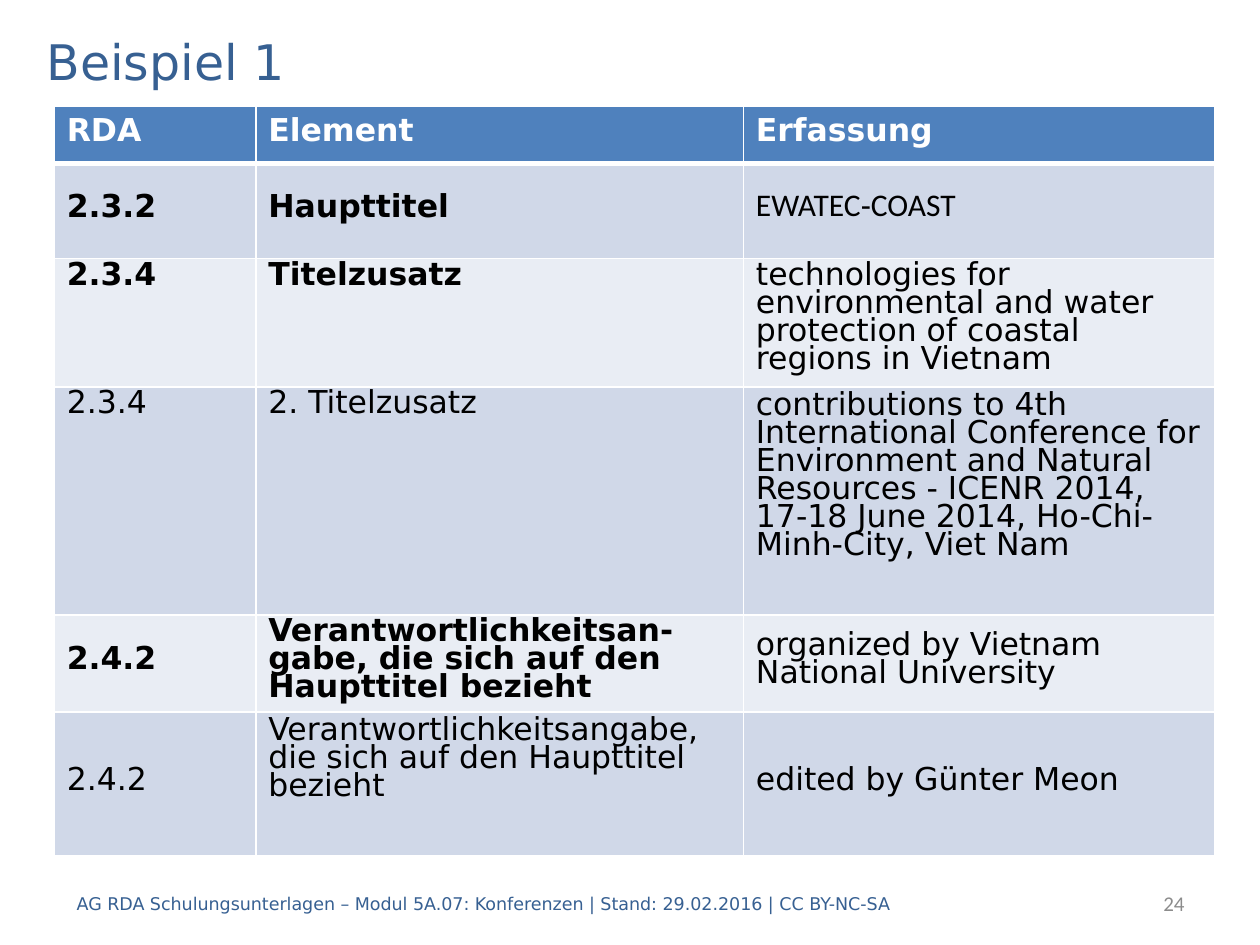
from lxml.etree import SubElement
from pptx import Presentation
from pptx.dml.color import RGBColor
from pptx.enum.text import MSO_ANCHOR, PP_ALIGN
from pptx.oxml.ns import qn
from pptx.util import Inches, Pt

WHITE = RGBColor(0xFF, 0xFF, 0xFF)
BLACK = RGBColor(0, 0, 0)
GREY = RGBColor(0x8C, 0x8C, 0x8C)
NAVY = RGBColor(0x37, 0x60, 0x92)
HEADER = RGBColor(0x4F, 0x81, 0xBD)
BANDS = RGBColor(0xD0, 0xD8, 0xE8), RGBColor(0xE9, 0xED, 0xF4)
SANS, CALIBRI = "DejaVu Sans", "Calibri"
TOP, MID = MSO_ANCHOR.TOP, MSO_ANCHOR.MIDDLE

COLUMNS = [1.6, 3.87, 3.74]
ROW_HEIGHTS = [0.46, 0.75, 1.02, 1.81, 0.77, 1.14]
HEADINGS = ["RDA", "Element", "Erfassung"]
ENTRIES = [
    (["2.3.2", "Haupttitel", "EWATEC‐COAST"], True, [MID, MID, MID]),
    (["2.3.4", "Titelzusatz",
      "technologies for environmental and water protection of coastal "
      "regions in Vietnam"], True, [TOP, TOP, TOP]),
    (["2.3.4", "2. Titelzusatz",
      "contributions to 4th International Conference for Environment and "
      "Natural Resources - ICENR 2014, 17-18 June 2014, Ho-Chi-Minh-City, "
      "Viet Nam"], False, [TOP, TOP, MID]),
    (["2.4.2", "Verantwortlichkeitsan-gabe, die sich auf den Haupttitel bezieht",
      "organized by Vietnam National University"], True, [MID, MID, MID]),
    (["2.4.2", "Verantwortlichkeitsangabe, die sich auf den Haupttitel bezieht",
      "edited by Günter Meon"], False, [MID, MID, MID]),
]
RAISED = {(3, 2), (5, 1)}


def add_run(p, text, size, color, font=SANS, bold=False):
    """Add one formatted run to a paragraph."""
    r = p.add_run()
    r.text = text
    r.font.size, r.font.name, r.font.bold = Pt(size), font, bold
    r.font.color.rgb = color


def set_borders(cell, bottom=1):
    """Draw white lines around a cell, the lower one in the given width."""
    tc_pr = cell._tc.get_or_add_tcPr()
    for side, width in zip("LRTB", (1, 1, 1, bottom)):
        ln = SubElement(tc_pr, qn(f"a:ln{side}"), w=str(Pt(width)))
        fill = SubElement(ln, qn("a:solidFill"))
        SubElement(fill, qn("a:srgbClr"), val=str(WHITE))


def fill_cell(cell, color, anchor=TOP, bottom=1):
    """Format a cell and return its paragraph."""
    set_borders(cell, bottom)
    cell.fill.solid()
    cell.fill.fore_color.rgb = color
    cell.vertical_anchor = anchor
    return cell.text_frame.paragraphs[0]


def add_title(s, box, text):
    """Place the title placeholder in its box."""
    sp = s.shapes.title
    sp.left, sp.top, sp.width, sp.height = map(Inches, box)
    tf = sp.text_frame
    tf.vertical_anchor = MID
    p = tf.paragraphs[0]
    p.alignment = PP_ALIGN.LEFT
    add_run(p, text, 28, NAVY)


def add_entries(s, box):
    """Build the table of RDA elements in its box."""
    table = s.shapes.add_table(len(ROW_HEIGHTS), len(COLUMNS), *map(Inches, box)).table
    for column, width in zip(table.columns, COLUMNS):
        column.width = Inches(width)
    for row, height in zip(table.rows, ROW_HEIGHTS):
        row.height = Inches(height)
    for j, text in enumerate(HEADINGS):
        p = fill_cell(table.cell(0, j), HEADER, bottom=3)
        add_run(p, text, 18, WHITE, bold=True)
    for i, (texts, core, anchors) in enumerate(ENTRIES, 1):
        for j, (text, anchor) in enumerate(zip(texts, anchors)):
            cell = table.cell(i, j)
            p = fill_cell(cell, BANDS[(i - 1) % 2], anchor)
            p.line_spacing = Pt(16)
            p.space_before = p.space_after = Pt(6)
            if (i, j) in RAISED:
                cell.margin_bottom = Inches(0.4)
            font = CALIBRI if (i, j) == (1, 2) else SANS
            add_run(p, text, 18, BLACK, font, core and j < 2)


def add_note(s, box, text, size, color, font, align):
    """Place one line of the footer in its box."""
    tf = s.shapes.add_textbox(*map(Inches, box)).text_frame
    tf.word_wrap = True
    tf.vertical_anchor = MID
    p = tf.paragraphs[0]
    p.alignment = align
    add_run(p, text, size, color, font)


def add_footer(s, top, height):
    """Place the source line and the slide number."""
    add_note(s, (7.91, top, 1.59, height), "24", 12, GREY, CALIBRI, PP_ALIGN.RIGHT)
    add_note(s, (0.51, top, 8.35, height),
             "AG RDA Schulungsunterlagen – Modul 5A.07: Konferenzen | "
             "Stand: 29.02.2016 | CC BY-NC-SA", 10, NAVY, SANS, PP_ALIGN.LEFT)


def main():
    """Build the slide and save it."""
    prs = Presentation()
    prs.slide_width, prs.slide_height = Inches(10), Inches(7.5)
    s = prs.slides.add_slide(prs.slide_layouts[5])
    add_title(s, (0.27, 0.2, 9.45, 0.56), "Beispiel 1")
    add_entries(s, (0.43, 0.84, sum(COLUMNS), sum(ROW_HEIGHTS)))
    add_footer(s, 6.97, 0.4)
    prs.save("out.pptx")


if __name__ == "__main__":
    main()
